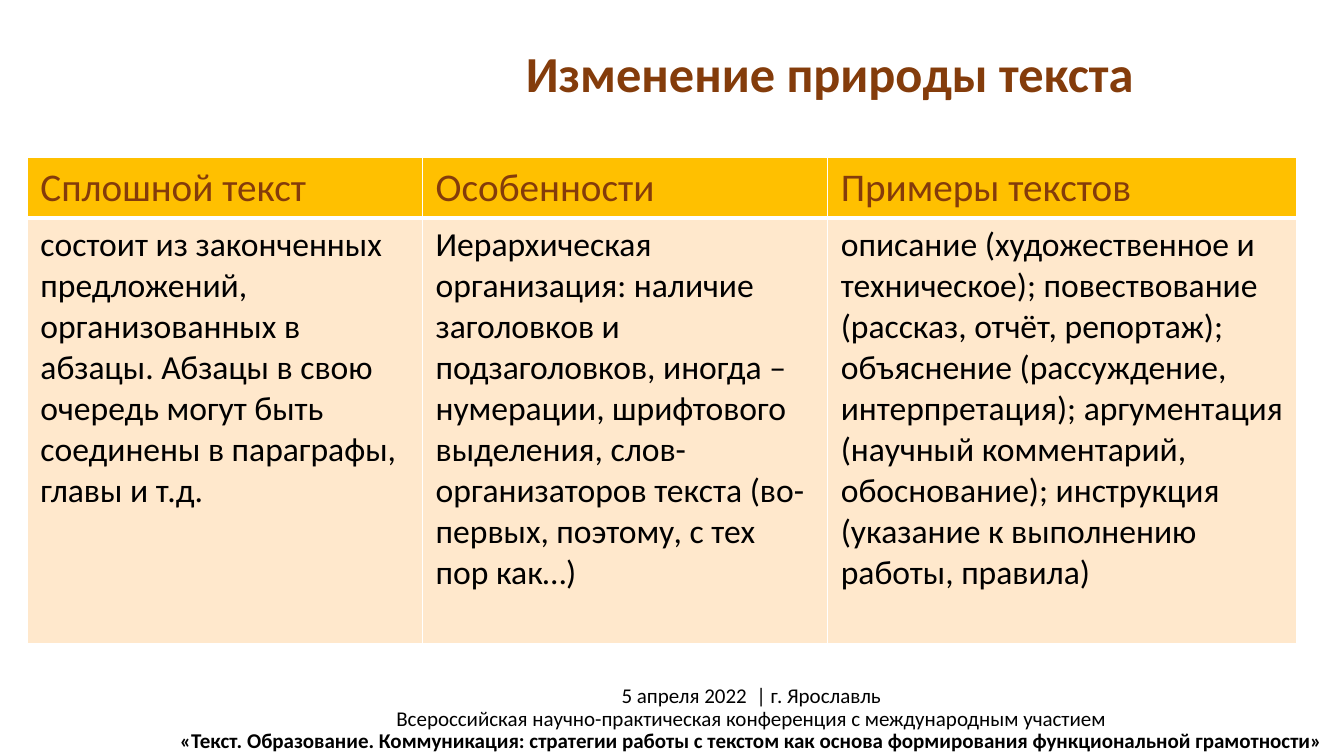
from dataclasses import dataclass

from lxml import etree
from pptx import Presentation
from pptx import util as u
from pptx.dml.color import RGBColor
from pptx.enum import text as t
from pptx.oxml import ns

FONT = "Calibri"
BROWN, BLACK, WHITE = "843C0B", "000000", "FFFFFF"
AMBER, PEACH = "FFC000", "FFE8CC"


@dataclass
class Column:
    width: float
    heading: str
    body: str


@dataclass
class RowStyle:
    height: float
    fill: str
    size: int
    color: str
    bottom_border: int


COLUMNS = [
    Column(9.96, "Сплошной текст",
           "состоит из законченных предложений, организованных в абзацы. "
           "Абзацы в свою очередь могут быть соединены в параграфы, главы и т.д."),
    Column(10.21, "Особенности",
           "Иерархическая организация: наличие заголовков и подзаголовков, "
           "иногда – нумерации, шрифтового выделения, слов-организаторов текста "
           "(во-первых, поэтому, с тех пор как…)"),
    Column(11.81, "Примеры текстов",
           "описание (художественное и техническое); повествование (рассказ, "
           "отчёт, репортаж); объяснение (рассуждение, интерпретация); "
           "аргументация (научный комментарий, обоснование); инструкция "
           "(указание к выполнению работы, правила)"),
]
ROW_STYLES = [
    RowStyle(1.52, AMBER, 28, BROWN, 3),
    RowStyle(10.72, PEACH, 24, BLACK, 1),
]
CONFERENCE_LINES = [
    "5 апреля 2022  | г. Ярославль",
    "Всероссийская научно-практическая конференция с международным участием",
    "«Текст. Образование. Коммуникация: стратегии работы с текстом "
    "как основа формирования функциональной грамотности»",
]


def rgb(value: str) -> RGBColor:
    return RGBColor.from_string(value)


def set_all(target, values: dict) -> None:
    for name, value in values.items():
        setattr(target, name, value)


def set_font(font, size: float, color: str, bold: bool = False) -> None:
    set_all(font, {"name": FONT, "size": u.Pt(size), "bold": bold})
    font.color.rgb = rgb(color)


def set_borders(cell, bottom: int) -> None:
    tc_pr = cell._tc.get_or_add_tcPr()
    widths = {"lnL": 1, "lnR": 1, "lnT": 1, "lnB": bottom}
    for index, (side, width) in enumerate(widths.items()):
        line = etree.Element(ns.qn(f"a:{side}"), w=str(u.Pt(width)))
        fill = etree.SubElement(line, ns.qn("a:solidFill"))
        etree.SubElement(fill, ns.qn("a:srgbClr"), val=WHITE)
        tc_pr.insert(index, line)


def fill_cell(cell, content: str, style: RowStyle) -> None:
    cell.text = content
    set_all(cell, {"margin_left": u.Cm(0.33), "margin_right": u.Cm(0.33),
                   "margin_top": u.Cm(0.17), "margin_bottom": u.Cm(0.17)})
    set_font(cell.text_frame.paragraphs[0].runs[0].font, style.size, style.color)
    cell.fill.solid()
    cell.fill.fore_color.rgb = rgb(style.fill)
    set_borders(cell, style.bottom_border)


def add_conference(slide) -> None:
    conference = slide.shapes.add_textbox(u.Cm(4.01), u.Cm(17.15), u.Cm(29.85), u.Cm(1.96))
    conference.text_frame.word_wrap = True
    paragraph = conference.text_frame.paragraphs[0]
    set_all(paragraph, {"alignment": t.PP_ALIGN.CENTER, "line_spacing": u.Pt(16)})
    for index, line in enumerate(CONFERENCE_LINES):
        if index:
            paragraph.add_line_break()
        run = paragraph.add_run()
        run.text = line
        set_font(run.font, 15, BLACK, bold=line == CONFERENCE_LINES[-1])


def add_comparison(slide) -> None:
    width = sum(column.width for column in COLUMNS)
    height = sum(style.height for style in ROW_STYLES)
    table = slide.shapes.add_table(
        len(ROW_STYLES), len(COLUMNS), u.Cm(0.69), u.Cm(3.96), u.Cm(width), u.Cm(height)).table
    for row, style in zip(table.rows, ROW_STYLES):
        row.height = u.Cm(style.height)
    for index, column in enumerate(COLUMNS):
        table.columns[index].width = u.Cm(column.width)
        for row, content in enumerate((column.heading, column.body)):
            fill_cell(table.cell(row, index), content, ROW_STYLES[row])


def format_title(title) -> None:
    set_all(title, {"left": u.Cm(13), "top": u.Cm(0.94),
                    "width": u.Cm(16.89), "height": u.Cm(1.8)})
    title.text = "Изменение природы текста"
    set_all(title.text_frame, {"word_wrap": True, "auto_size": t.MSO_AUTO_SIZE.NONE,
                               "vertical_anchor": t.MSO_ANCHOR.TOP})
    paragraph = title.text_frame.paragraphs[0]
    paragraph.alignment = t.PP_ALIGN.LEFT
    set_font(paragraph.runs[0].font, 36, BROWN, bold=True)


def main() -> None:
    presentation = Presentation()
    set_all(presentation, {"slide_width": u.Cm(33.87), "slide_height": u.Cm(19.05)})
    slide = presentation.slides.add_slide(presentation.slide_layouts[5])

    # Title
    format_title(slide.shapes.title)
    # Conference details at the bottom
    add_conference(slide)
    # Table of text features
    add_comparison(slide)

    presentation.save("out.pptx")


if __name__ == "__main__":
    main()
